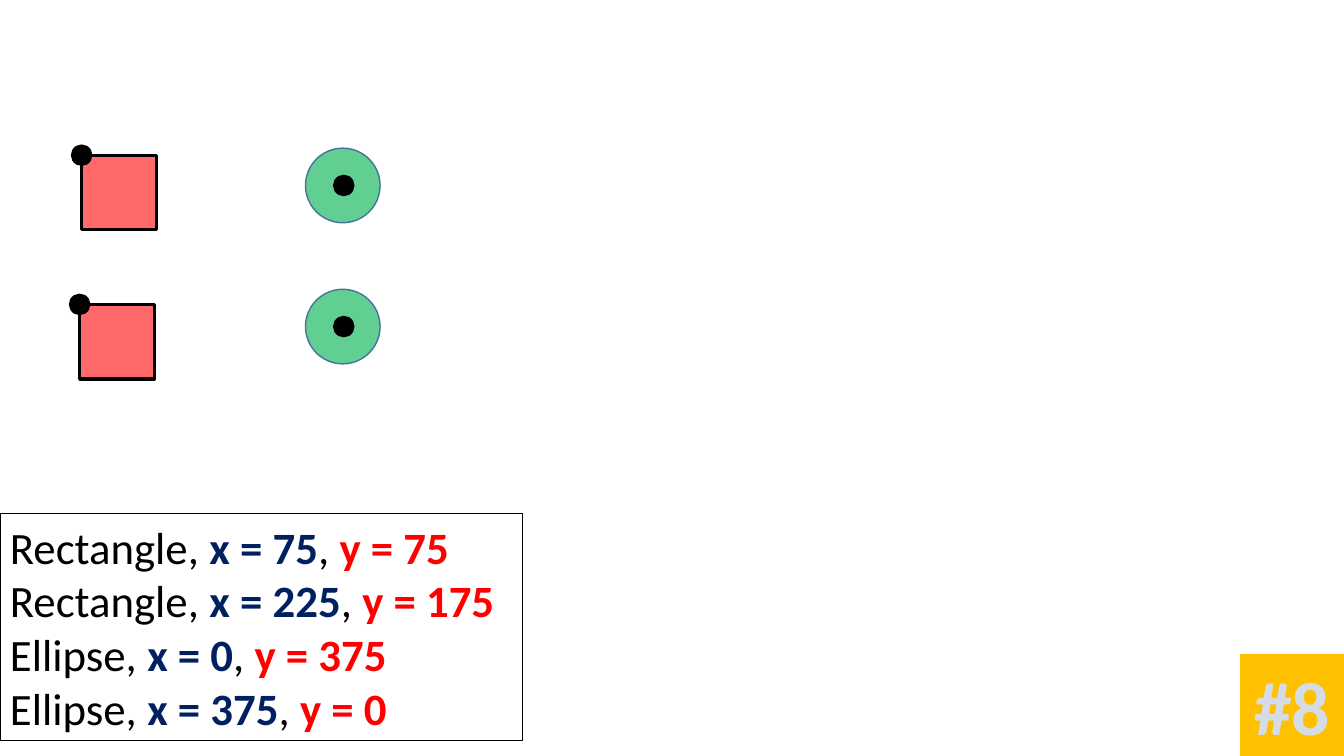
from lxml import etree
from pptx import Presentation
from pptx.dml.color import RGBColor
from pptx.enum import dml, shapes, text
from pptx.oxml import ns
from pptx.util import Inches, Pt

BLACK = RGBColor(0, 0, 0)
RED = RGBColor(0xFF, 0, 0)
NAVY = RGBColor(0, 0x20, 0x60)
GREEN = RGBColor(0, 0xB0, 0x50)
GREEN_EDGE = RGBColor(0x43, 0x73, 0x9E)
AMBER = RGBColor(0xFF, 0xC0, 0)
SLATE = RGBColor(0x44, 0x54, 0x6A)
PALE = RGBColor(0xD6, 0xDC, 0xE5)

RECT = shapes.MSO_SHAPE.RECTANGLE
OVAL = shapes.MSO_SHAPE.OVAL

COORDINATES = [
    ("Rectangle", 75, 75),
    ("Rectangle", 225, 175),
    ("Ellipse", 0, 375),
    ("Ellipse", 375, 0),
]
FIGURE_SIZE, DOT_SIZE = 0.74, 0.2
SQUARE = dict(kind=RECT, fill=RED, alpha=59, line=BLACK, width=2.25)
CIRCLE = dict(kind=OVAL, fill=GREEN, alpha=62, line=GREEN_EDGE, width=1)
FIGURES = [
    (SQUARE, 0.81, 1.54, -0.1),
    (CIRCLE, 3.03, 2.87, 0.28),
    (SQUARE, 0.79, 3.02, -0.1),
    (CIRCLE, 3.03, 1.47, 0.28),
]


def add_figure(parent, kind, left, top, width_in, height_in,
               fill=None, alpha=None, line=None, width=1):
    figure = parent.add_shape(kind, Inches(left), Inches(top),
                              Inches(width_in), Inches(height_in))
    figure.shadow.inherit = False
    if fill is None:
        figure.fill.background()
    else:
        figure.fill.solid()
        figure.fill.fore_color.rgb = fill
    if alpha:
        colour = figure.fill._xPr.find(".//" + ns.qn("a:srgbClr"))
        etree.SubElement(colour, ns.qn("a:alpha"), val=str(alpha * 1000))
    if line is None:
        figure.line.fill.background()
    else:
        figure.line.color.rgb = line
        figure.line.width = Pt(width)
    return figure


def add_run(paragraph, words, size=32, color=BLACK, bold=False):
    run = paragraph.add_run()
    run.text = words
    run.font.name = "Calibri"
    run.font.size = Pt(size)
    run.font.bold = bold
    run.font.color.rgb = color
    return run


deck = Presentation()
deck.slide_width, deck.slide_height = Inches(13.33), Inches(7.5)
slide = deck.slides.add_slide(deck.slide_layouts[6])

coordinate_box = add_figure(slide.shapes, RECT, 0, 5.09, 5.18, 2.26, line=BLACK, width=0.75)
frame = coordinate_box.text_frame
frame.word_wrap = True
for index, (name, x, y) in enumerate(COORDINATES):
    paragraph = frame.add_paragraph() if index else frame.paragraphs[0]
    paragraph.alignment = text.PP_ALIGN.LEFT
    add_run(paragraph, f"{name}, ")
    add_run(paragraph, f"x = {x}", color=NAVY, bold=True)
    add_run(paragraph, ", ")
    add_run(paragraph, f"y = {y}", color=RED, bold=True)

for style, left, top, dot_offset in FIGURES:
    marked_figure = slide.shapes.add_group_shape().shapes
    add_figure(marked_figure, left=left, top=top,
               width_in=FIGURE_SIZE, height_in=FIGURE_SIZE, **style)
    dot_top = top + (FIGURE_SIZE - DOT_SIZE) / 2 if style is CIRCLE else top + dot_offset
    add_figure(marked_figure, OVAL, left + dot_offset, dot_top,
               DOT_SIZE, DOT_SIZE, fill=BLACK, line=BLACK)

badge = add_figure(slide.shapes, RECT, 12.3, 6.49, 1.03, 1.01, fill=AMBER)
badge.text_frame.word_wrap = False
badge_label = badge.text_frame.paragraphs[0]
badge_label.alignment = text.PP_ALIGN.CENTER
hatch = add_run(badge_label, "#8", size=54, bold=True).font.fill
hatch.patterned()
hatch.pattern = dml.MSO_PATTERN.DARK_UPWARD_DIAGONAL
hatch.fore_color.rgb = SLATE
hatch.back_color.rgb = PALE

deck.save("out.pptx")
